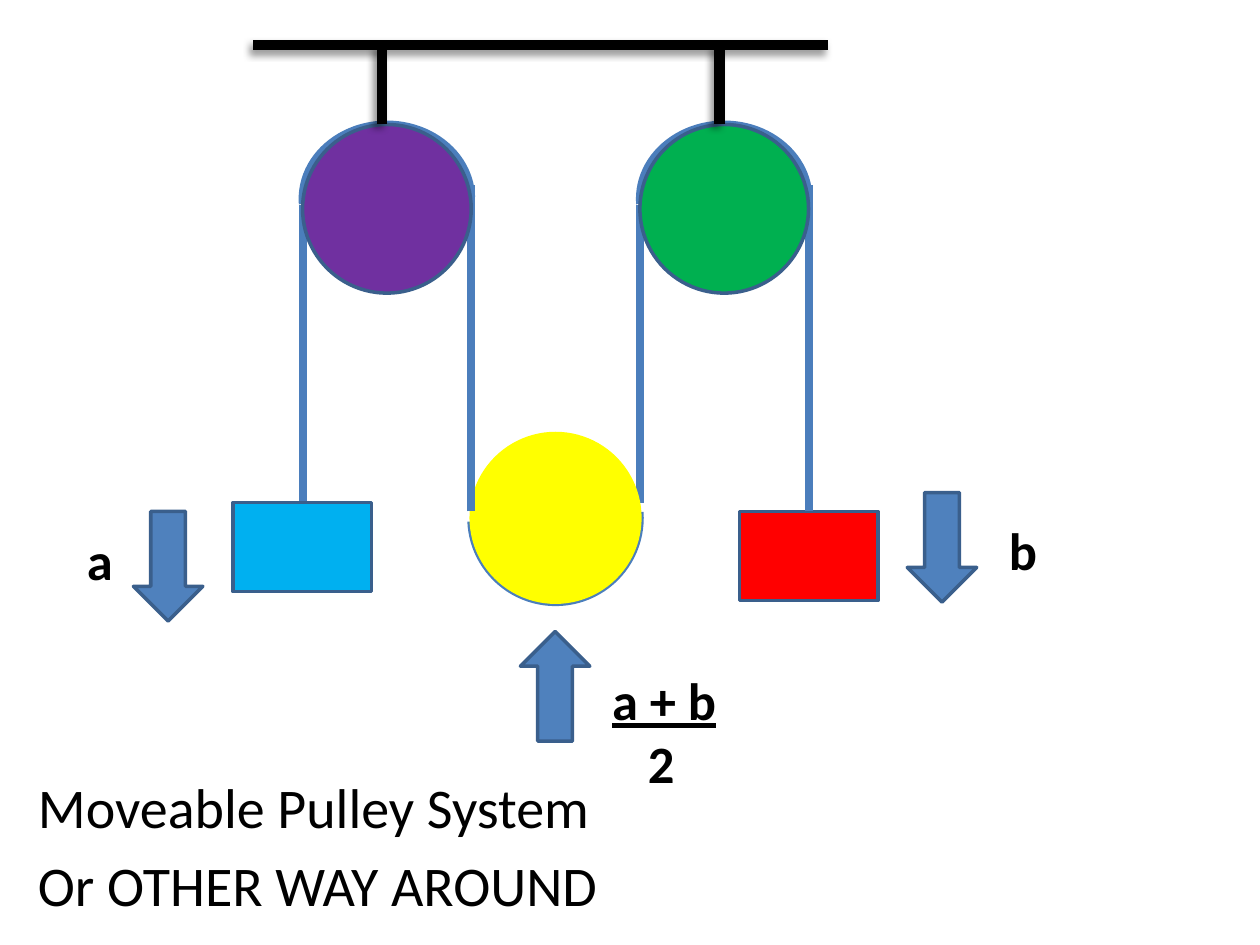
from lxml import etree
from pptx import Presentation
from pptx.dml.color import RGBColor
from pptx.enum.shapes import MSO_CONNECTOR, MSO_SHAPE
from pptx.enum.text import MSO_AUTO_SIZE
from pptx.oxml.ns import qn
from pptx.util import Cm, Pt

LINE = MSO_CONNECTOR.STRAIGHT
RECTANGLE, OVAL = MSO_SHAPE.RECTANGLE, MSO_SHAPE.OVAL
ARC, ARROW = MSO_SHAPE.ARC, MSO_SHAPE.DOWN_ARROW
NO_FIT = MSO_AUTO_SIZE.NONE

hex_colour = RGBColor.from_string
BLACK, ROPE, OUTLINE, ARROW_FILL = "000000", "4B7EBC", "3A5F8C", "4F81BD"
YELLOW = "FFFF00"
DIAMETER = 3.4
BEAM_TOP, PULLEY_TOP = 0.91, 2.51
LEFT_END, RIGHT_END = 10.13, 10.31

deck = Presentation()
deck.slide_width, deck.slide_height = Cm(25.4), Cm(19.05)
page = deck.slides.add_slide(deck.slide_layouts[1])
title = page.shapes.title
title.element.getparent().remove(title.element)


def add_figure(kind, left, top, width, height, fill, outline=OUTLINE, weight=2):
    figure = page.shapes.add_shape(kind, Cm(left), Cm(top), Cm(width), Cm(height))
    figure.shadow.inherit = False
    if fill:
        figure.fill.solid()
        figure.fill.fore_color.rgb = hex_colour(fill)
    else:
        figure.fill.background()
    figure.line.color.rgb = hex_colour(outline)
    figure.line.width = Pt(weight)
    return figure


def add_line(x1, y1, x2, y2, colour, weight, shaded=False):
    line = page.shapes.add_connector(LINE, Cm(x1), Cm(y1), Cm(x2), Cm(y2))
    line.line.color.rgb = hex_colour(colour)
    line.line.width = Pt(weight)
    effects = etree.SubElement(line.element.spPr, qn("a:effectLst"))
    if shaded:
        shadow = etree.SubElement(effects, qn("a:outerShdw"), blurRad="50800",
                                  dist="38100", dir="8100000", rotWithShape="0")
        tint = etree.SubElement(shadow, qn("a:srgbClr"), val=BLACK)
        etree.SubElement(tint, qn("a:alpha"), val="40000")


body = page.placeholders[1]
placement = {"left": Cm(0.51), "top": Cm(15.44), "width": Cm(22.86), "height": Cm(3.61)}
for name, value in placement.items():
    setattr(body, name, value)
body.text_frame.text = "Moveable Pulley System\nOr OTHER WAY AROUND"
body.text_frame.auto_size = NO_FIT
for para in body.text_frame.paragraphs:
    etree.SubElement(para._p.get_or_add_pPr(), qn("a:buNone"))
    for name, value in {"name": "Calibri", "size": Pt(32)}.items():
        setattr(para.runs[0].font, name, value)
    para.runs[0].font.color.rgb = hex_colour(BLACK)

add_figure(RECTANGLE, 14.91, RIGHT_END, 2.79, 1.8, "FF0000")
add_line(5.11, BEAM_TOP, 16.69, BEAM_TOP, BLACK, 6, True)

pulleys = [
    (12.9, PULLEY_TOP, "00B050", OUTLINE, 3, 176.42, 358.83),
    (9.5, 8.74, YELLOW, YELLOW, DIAMETER, 355.96, 177.55),
    (6.1, PULLEY_TOP, "7030A0", OUTLINE, 3, 176.42, 358.83),
]
for left, top, fill, outline, arc_height, start, end in pulleys:
    right = left + DIAMETER
    fixed = top == PULLEY_TOP
    if fixed:
        add_line(right, RIGHT_END, right, 3.73, ROPE, 4.5)
        add_line(left, LEFT_END, left, 4.14, ROPE, 4.5)
    arc = add_figure(ARC, left, top, DIAMETER, arc_height, None, ROPE, 4.5)
    for index, degrees in enumerate((start, end)):
        arc.adjustments[index] = degrees * 0.6
    add_figure(OVAL, left, top, DIAMETER, DIAMETER, fill, outline)
    if fixed:
        add_line(left + 1.6, BEAM_TOP, left + 1.6, PULLEY_TOP, BLACK, 6, True)

add_figure(RECTANGLE, 4.7, LEFT_END, 2.79, 1.8, "00B0F0")

for left, top, rotation in [(10.49, 12.73, 180), (18.29, 9.93, 0), (2.69, 10.31, 0)]:
    add_figure(ARROW, left, top, 1.4, 2.21, ARROW_FILL).rotation = rotation

labels = [
    ("a", 1.5, 10.52, 1.8, 1.55),
    ("b", 20.09, 10.31, 1.8, 1.55),
    ("a + b\n2", 12.09, 13.34, 3.4, 2.82),
]
for text, left, top, width, height in labels:
    box = page.shapes.add_textbox(Cm(left), Cm(top), Cm(width), Cm(height))
    box.text_frame.word_wrap = True
    box.text_frame.text = text
    for para in box.text_frame.paragraphs:
        span = para.runs[0]
        style = {"name": "Calibri", "size": Pt(30), "bold": True, "underline": span.text == "a + b"}
        for name, value in style.items():
            setattr(span.font, name, value)
        span.font.color.rgb = hex_colour(BLACK)
        if span.text == "2":
            para._p.get_or_add_pPr().set("marL", str(Cm(0.72)))

deck.save("out.pptx")
